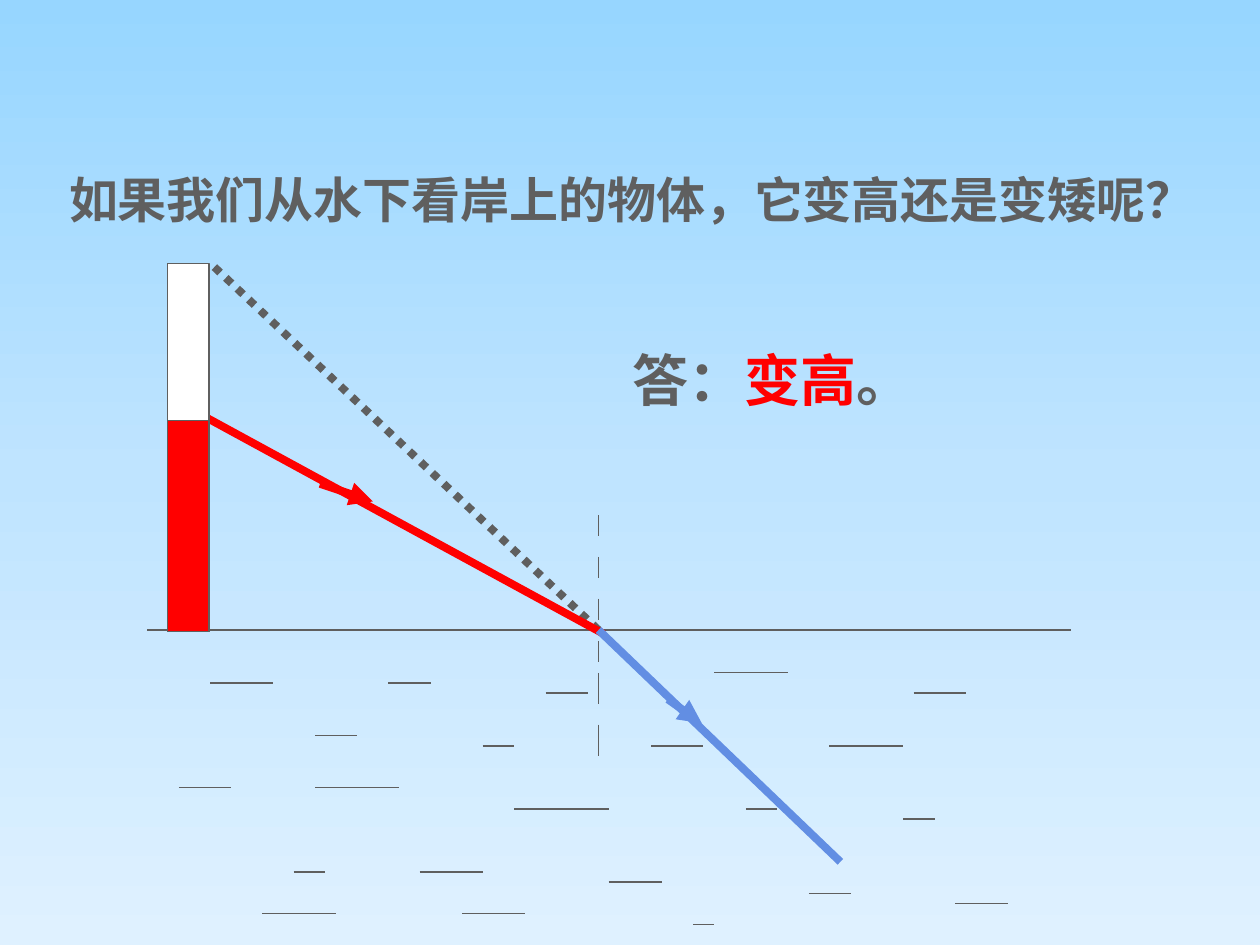
from copy import deepcopy
from lxml import etree
from pptx import Presentation
from pptx.dml.color import RGBColor
from pptx.enum.dml import MSO_LINE
from pptx.enum.shapes import MSO_CONNECTOR as Conn, MSO_SHAPE as Geo
from pptx.enum.text import MSO_AUTO_SIZE as Fit
from pptx.oxml.ns import qn
from pptx.util import Inches, Pt

GREY, RED, BLUE, WHITE = "5F5F5F", "FF0000", "628EE3", "FFFFFF"
THIN, THICK = 0.75, 4.5


def rgb(code):
    return RGBColor.from_string(code)


class Pen:
    font = "Arial"

    def __init__(self, slide):
        self.slide = slide
        self.shapes = slide.shapes

    def sky(self, codes):
        """Fill the background from top to bottom with even stops."""
        fill = self.slide.background.fill
        fill.gradient()
        fill.gradient_angle = 270
        stops = self.slide.element.find(".//" + qn("a:gsLst"))
        while len(stops) < len(codes):
            stops.append(deepcopy(stops[0]))
        for i, (stop, code) in enumerate(zip(fill.gradient_stops, codes)):
            stop.position = i / (len(codes) - 1)
            stop.color.rgb = rgb(code)

    def group(self):
        return self.shapes.add_group_shape().shapes

    def line(self, start, end, color=GREY, width=THIN, dash=None,
             arrow=False, into=None):
        ends = [Inches(v) for v in (*start, *end)]
        line = (into or self.shapes).add_connector(Conn.STRAIGHT, *ends)
        line.line.color.rgb = rgb(color)
        line.line.width = Pt(width)
        if dash:
            line.line.dash_style = dash
        props = line.element.spPr
        if arrow:
            etree.SubElement(props.find(qn("a:ln")), qn("a:tailEnd"), type="triangle")
        etree.SubElement(props, qn("a:effectLst"))

    def bar(self, x, y, w, h, color):
        bar = self.shapes.add_shape(Geo.RECTANGLE, *map(Inches, (x, y, w, h)))
        bar.shadow.inherit = False
        bar.fill.solid()
        bar.fill.fore_color.rgb = rgb(color)
        bar.line.color.rgb = rgb(GREY)
        bar.line.width = Pt(THIN)

    def text(self, x, y, w, h, size, runs):
        frame = self.shapes.add_textbox(*map(Inches, (x, y, w, h))).text_frame
        frame.word_wrap = True
        frame.auto_size = Fit.SHAPE_TO_FIT_TEXT
        for words, color in runs:
            run = frame.paragraphs[0].add_run()
            run.text = words
            run.font.name = self.font
            run.font.size = Pt(size)
            run.font.bold = True
            run.font.color.rgb = rgb(color)


# Ripples in the water: height, then (left, right) of each dash
RIPPLES = [
    (5.42, [(1.67, 2.17), (3.08, 3.42)]),
    (5.5, [(4.33, 4.67), (7.25, 7.67)]),
    (5.34, [(5.67, 6.25)]),
    (5.84, [(2.5, 2.83)]),
    (5.92, [(3.83, 4.08), (5.17, 5.58), (6.58, 7.17)]),
    (6.25, [(1.42, 1.83), (2.5, 3.17)]),
    (6.42, [(4.08, 4.83), (5.92, 6.17)]),
    (6.5, [(7.17, 7.42)]),
    (6.92, [(2.33, 2.58), (3.33, 3.83)]),
    (7, [(4.83, 5.25)]),
    (7.09, [(6.42, 6.75)]),
    (7.17, [(7.58, 8)]),
    (7.25, [(2.08, 2.67), (3.67, 4.17)]),
    (7.34, [(5.5, 5.67)]),
]
# Dashes of the normal: top, bottom
NORMAL = [(4.09, 4.25), (4.42, 4.59), (4.75, 4.92),
          (5.09, 5.25), (5.34, 5.59), (5.75, 6)]
HIT = (4.75, 5)  # where the ray enters the water


def main():
    deck = Presentation()
    deck.slide_width, deck.slide_height = Inches(10), Inches(7.5)
    pen = Pen(deck.slides.add_slide(deck.slide_layouts[6]))
    pen.sky(["97D6FF", "BFE4FF", "DFF1FF"])

    # Water surface and ripples
    pen.line((1.17, 5), (8.5, 5))
    for y, spans in RIPPLES:
        for left, right in spans:
            pen.line((left, y), (right, y))

    # Apparent ray, then the real ray in air
    pen.line(HIT, (1.67, 2.09), width=THICK, dash=MSO_LINE.ROUND_DOT)
    ray = pen.group()
    pen.line((1.63, 3.31), (4.79, 5.03), RED, THICK, into=ray)
    pen.line((2.54, 3.84), (2.96, 3.98), RED, THICK, arrow=True, into=ray)

    # Apparent pole, answer, real pole
    pen.bar(1.33, 2.09, 0.33, 2.92, WHITE)
    pen.text(4.92, 2.69, 3.33, 0.64, 32,
             [("答：", GREY), ("变高", RED), ("。", GREY)])
    pen.bar(1.33, 3.34, 0.33, 1.67, RED)

    # Ray in water
    ray = pen.group()
    pen.line(HIT, (6.67, 6.84), BLUE, THICK, into=ray)
    pen.line((5.3, 5.55), (5.57, 5.74), BLUE, THICK, arrow=True, into=ray)

    # Normal to the surface
    normal = pen.group()
    for top, bottom in NORMAL:
        pen.line((HIT[0], top), (HIT[0], bottom), into=normal)

    # Question
    pen.text(0.45, 1.3, 9.1, 0.57, 28,
             [("如果我们从水下看岸上的物体，它变高还是变矮呢？", GREY)])

    deck.save("out.pptx")


if __name__ == "__main__":
    main()
